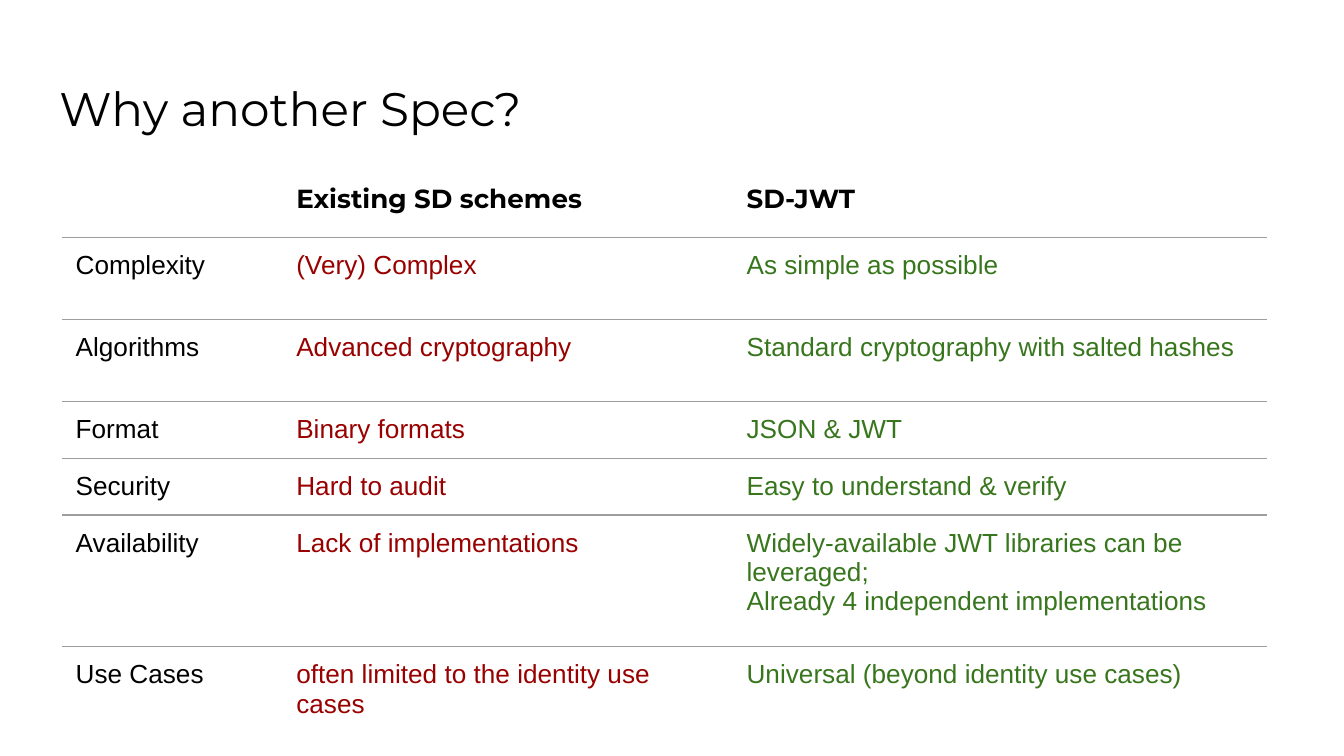
import pptx
import pptx.dml.color
import pptx.enum.text
import pptx.oxml
import pptx.oxml.ns
import pptx.util
from pptx.util import Cm

TITLE = "Why another Spec?"
ROWS = [
    ("", "Existing SD schemes", "SD-JWT"),
    ("Complexity", "(Very) Complex", "As simple as possible"),
    ("Algorithms", "Advanced cryptography", "Standard cryptography with salted hashes"),
    ("Format", "Binary formats", "JSON & JWT"),
    ("Security", "Hard to audit", "Easy to understand & verify"),
    ("Availability", "Lack of implementations",
     "Widely-available JWT libraries can be leveraged;\nAlready 4 independent implementations"),
    ("Use Cases", "often limited to the identity use cases", "Universal (beyond identity use cases)"),
]
COL_WIDTHS = [4.17, 8.51, 10.08]
ROW_HEIGHTS = [1.2, 1.55, 1.55, 1.07, 1.07, 2.49, 1.63]
COLORS = {"text": "000000", "existing": "990000", "sd_jwt": "38761D", "rule": "9E9E9E"}
COL_COLORS = ["text", "existing", "sd_jwt"]
MARGINS = {f"margin_{side}": Cm(0.25) for side in ("left", "right", "top", "bottom")}
FONTS = {
    "title": {"name": "Montserrat", "size": pptx.util.Pt(25.2), "bold": False},
    "header": {"name": "Montserrat", "size": pptx.util.Pt(14), "bold": True},
    "body": {"name": "Arial", "size": pptx.util.Pt(14), "bold": False},
}


def apply(obj, values):
    for name, value in values.items():
        setattr(obj, name, value)


def write(p, text, font, color):
    p.text = text
    for r in p.runs:
        apply(r.font, FONTS[font])
        r.font.color.rgb = pptx.dml.color.RGBColor.from_string(COLORS[color])


def set_borders(cell, ruled):
    tcPr = cell._tc.get_or_add_tcPr()
    ns = pptx.oxml.ns.nsdecls("a")
    for i, side in enumerate("LRTB"):
        paint = "<a:noFill/>"
        if side in ruled:
            paint = f'<a:solidFill><a:srgbClr val="{COLORS["rule"]}"/></a:solidFill>'
        tcPr.insert(i, pptx.oxml.parse_xml(f'<a:ln{side} {ns} w="9525">{paint}</a:ln{side}>'))


prs = pptx.Presentation()
apply(prs, {"slide_width": Cm(25.4), "slide_height": Cm(14.29)})
s = prs.slides.add_slide(prs.slide_layouts[5])

sp = s.shapes.title
apply(sp, {"left": Cm(0.87), "top": Cm(1.25), "width": Cm(23.67), "height": Cm(1.6)})
tf = sp.text_frame
apply(tf, {**MARGINS, "word_wrap": True, "auto_size": pptx.enum.text.MSO_AUTO_SIZE.NONE,
           "vertical_anchor": pptx.enum.text.MSO_ANCHOR.TOP})
p = tf.paragraphs[0]
p.alignment = pptx.enum.text.PP_ALIGN.LEFT
write(p, TITLE, "title", "text")

table = s.shapes.add_table(len(ROWS), len(COL_WIDTHS), Cm(1.18), Cm(3.22),
                           Cm(sum(COL_WIDTHS)), Cm(sum(ROW_HEIGHTS))).table
apply(table, {"first_row": False, "horz_banding": False})
for col, width in zip(table.columns, COL_WIDTHS):
    col.width = Cm(width)
for row, height in zip(table.rows, ROW_HEIGHTS):
    row.height = Cm(height)

last = len(ROWS) - 1
for i, row in enumerate(ROWS):
    ruled = ("T" if i > 0 else "") + ("B" if i < last else "")
    for j, text in enumerate(row):
        cell = table.cell(i, j)
        apply(cell, MARGINS)
        cell.fill.background()
        set_borders(cell, ruled)
        if text:
            write(cell.text_frame.paragraphs[0], text,
                  "body" if i else "header", COL_COLORS[j] if i else "text")

prs.save("out.pptx")
